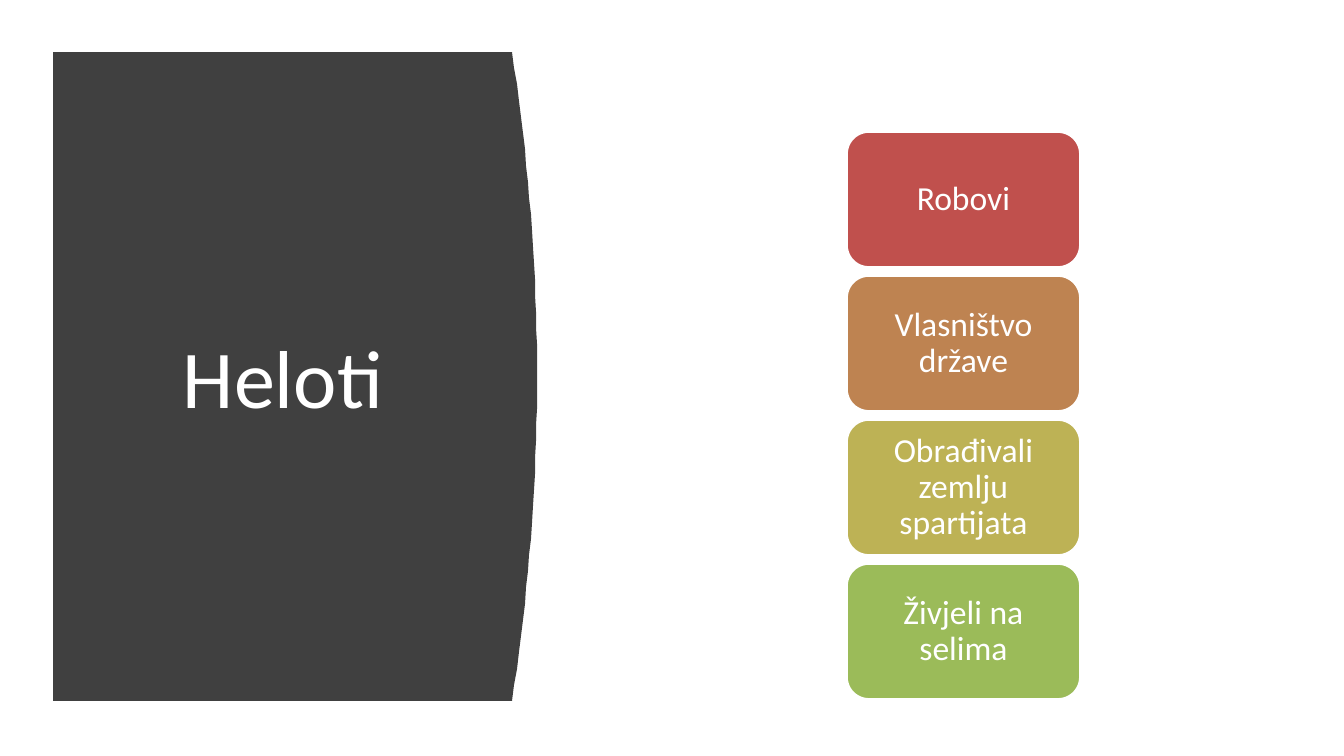
from pptx import Presentation
from pptx import util as u
from pptx.dml.color import RGBColor
from pptx.enum import shapes, text

PX = 914400 / 134.4  # EMU in one px


def px(n):
    return u.Emu(round(n * PX))


def write(s, words, size, inset_x, inset_y):
    """Put one centred white paragraph in a shape."""
    tf = s.text_frame
    tf.word_wrap = True
    tf.vertical_anchor = text.MSO_ANCHOR.MIDDLE
    tf.margin_left = tf.margin_right = px(inset_x)
    tf.margin_top = tf.margin_bottom = px(inset_y)
    p = tf.paragraphs[0]
    p.text = words
    p.alignment = text.PP_ALIGN.CENTER
    p.font.name = "Calibri"
    p.font.size = u.Pt(size)
    p.font.color.rgb = RGBColor.from_string("FFFFFF")
    return p


prs = Presentation()
prs.slide_width, prs.slide_height = px(1344), px(756)
slide = prs.slides.add_slide(prs.slide_layouts[6])

# Dark panel whose right edge bulges as a parabola
left, top, right, bottom, bulge = 53, 52, 512, 701, 25
steps = 40
edge = []
for i in range(steps + 1):
    t = 2 * i / steps - 1
    edge.append((right + bulge * (1 - t * t), top + (bottom - top) * i / steps))
outline = slide.shapes.build_freeform(left, top, scale=PX)
outline.add_line_segments(edge + [(left, bottom)], close=True)
panel = outline.convert_to_shape()
panel.shadow.inherit = False
panel.fill.solid()
panel.fill.fore_color.rgb = RGBColor.from_string("404040")
panel.line.fill.background()

title = slide.shapes.add_shape(
    shapes.MSO_SHAPE.OVAL, px(95), px(112), px(376), px(528))
title.shadow.inherit = False
title.fill.background()
title.line.fill.background()
write(title, "Heloti", 44, 13, 7)

facts = [
    ("Robovi", "C0504D"),
    ("Vlasništvo države", "BE8351"),
    ("Obrađivali zemlju spartijata", "BDB255"),
    ("Živjeli na selima", "9BBB59"),
]
for i, (words, color) in enumerate(facts):
    s = slide.shapes.add_shape(
        shapes.MSO_SHAPE.ROUNDED_RECTANGLE,
        px(846), px(131 + 144 * i), px(235), px(137))
    s.shadow.inherit = False
    s.fill.solid()
    s.fill.fore_color.rgb = RGBColor.from_string(color)
    s.line.color.rgb = RGBColor.from_string("FFFFFF")
    s.line.width = u.Pt(2)
    p = write(s, words, 18, 9, 5)
    p.line_spacing = 0.9

prs.save("out.pptx")
